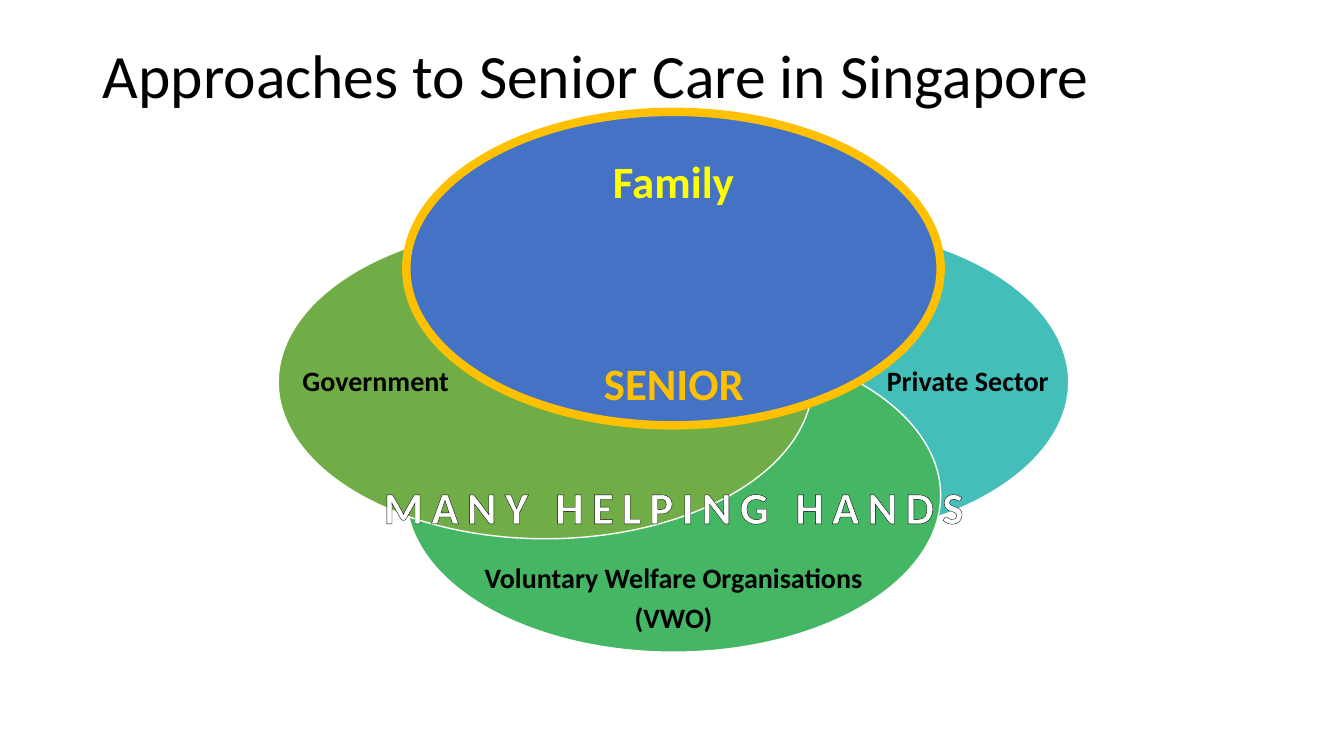
from lxml.etree import SubElement
from pptx import Presentation
from pptx.dml.color import RGBColor
from pptx.enum.shapes import MSO_SHAPE
from pptx.enum.text import MSO_ANCHOR, PP_ALIGN
from pptx.oxml.ns import qn
from pptx.util import Inches, Pt

COLOURS = {
    "black": "000000", "white": "FFFFFF", "yellow": "FFFF00", "gold": "FFC000",
    "family": "4472C4", "government": "70AD47", "private": "43BEB9", "voluntary": "45B664",
}
COLUMN, ROW = 1.27, 1.125
GRID_LEFT, GRID_TOP = 2.76, 1.11
OVAL_WIDTH, OVAL_HEIGHT = 5.3, 3.11


def colour(name):
    """Return the palette colour called name."""
    return RGBColor.from_string(COLOURS[name])


def write(paragraph, wording, size, ink, bold=True):
    """Add one formatted run to a paragraph and return it."""
    run = paragraph.add_run()
    run.text = wording
    run.font.name = "Calibri"
    run.font.size = Pt(size)
    run.font.bold = bold
    run.font.color.rgb = colour(ink)
    return run


def add_title(slide, wording):
    """Place and fill the title placeholder."""
    title = slide.shapes.title
    title.left, title.top = Inches(0.92), Inches(0.4)
    title.width, title.height = Inches(11.5), Inches(1.45)
    title.text_frame.vertical_anchor = MSO_ANCHOR.TOP
    heading = title.text_frame.paragraphs[0]
    heading.alignment = PP_ALIGN.LEFT
    heading.line_spacing = 0.9
    write(heading, wording, 44, "black", bold=False)


def add_sector(slide, column, row, fill, border="white", border_width=1):
    """Draw one oval of the diagram at a grid position."""
    sector = slide.shapes.add_shape(
        MSO_SHAPE.OVAL, Inches(GRID_LEFT + column * COLUMN), Inches(GRID_TOP + row * ROW),
        Inches(OVAL_WIDTH), Inches(OVAL_HEIGHT))
    sector.shadow.inherit = False
    sector.fill.solid()
    sector.fill.fore_color.rgb = colour(fill)
    sector.line.color.rgb = colour(border)
    sector.line.width = Pt(border_width)


def add_label(slide, place, lines, size, ink, align=PP_ALIGN.CENTER, spacing=0.9):
    """Add a vertically centred label and return its runs."""
    label = slide.shapes.add_textbox(*map(Inches, place))
    frame = label.text_frame
    frame.word_wrap = True
    frame.vertical_anchor = MSO_ANCHOR.MIDDLE
    frame.margin_left = frame.margin_right = 0
    runs = []
    for index, wording in enumerate(lines):
        paragraph = frame.add_paragraph() if index else frame.paragraphs[0]
        paragraph.alignment = align
        paragraph.line_spacing = spacing
        if index < len(lines) - 1:
            paragraph.space_after = Pt(0.35 * size)
        runs.append(write(paragraph, wording, size, ink))
    return runs


def outline_letters(run, ink, width, tracking):
    """Give a run outlined, widely spaced letters."""
    properties = run.font._element
    properties.set("spc", str(tracking * 100))
    outline = SubElement(properties, qn("a:ln"), w=str(Pt(width)))
    SubElement(SubElement(outline, qn("a:solidFill")), qn("a:srgbClr"), val=COLOURS[ink])
    properties.insert(0, outline)


def main():
    """Build and save the slide."""
    deck = Presentation()
    deck.slide_width, deck.slide_height = Inches(13.33), Inches(7.5)
    slide = deck.slides.add_slide(deck.slide_layouts[5])
    add_title(slide, "Approaches to Senior Care in Singapore")

    add_sector(slide, 2, 1, "private")
    add_sector(slide, 1, 2, "voluntary")
    add_sector(slide, 0, 1, "government")
    add_sector(slide, 1, 0, "family", "gold", 6)

    add_label(slide, (8.16, 3.49, 2.24, 0.6), ["Private Sector"], 20, "black", PP_ALIGN.RIGHT)
    add_label(slide, (4.64, 5.5, 4.08, 0.9),
              ["Voluntary Welfare Organisations", "(VWO)"], 20, "black")
    add_label(slide, (3.0, 3.49, 2.2, 0.6), ["Government"], 20, "black", PP_ALIGN.LEFT)
    add_label(slide, (4.64, 1.48, 4.08, 0.7), ["Family"], 32, "yellow")
    add_label(slide, (5.62, 3.48, 2.13, 0.64), ["SENIOR"], 32, "gold", spacing=1.0)
    motto, = add_label(slide, (3.42, 4.7, 6.53, 0.64), ["MANY HELPING HANDS"],
                       32, "white", spacing=1.0)
    outline_letters(motto, "black", 0.75, 6)
    deck.save("out.pptx")


if __name__ == "__main__":
    main()
